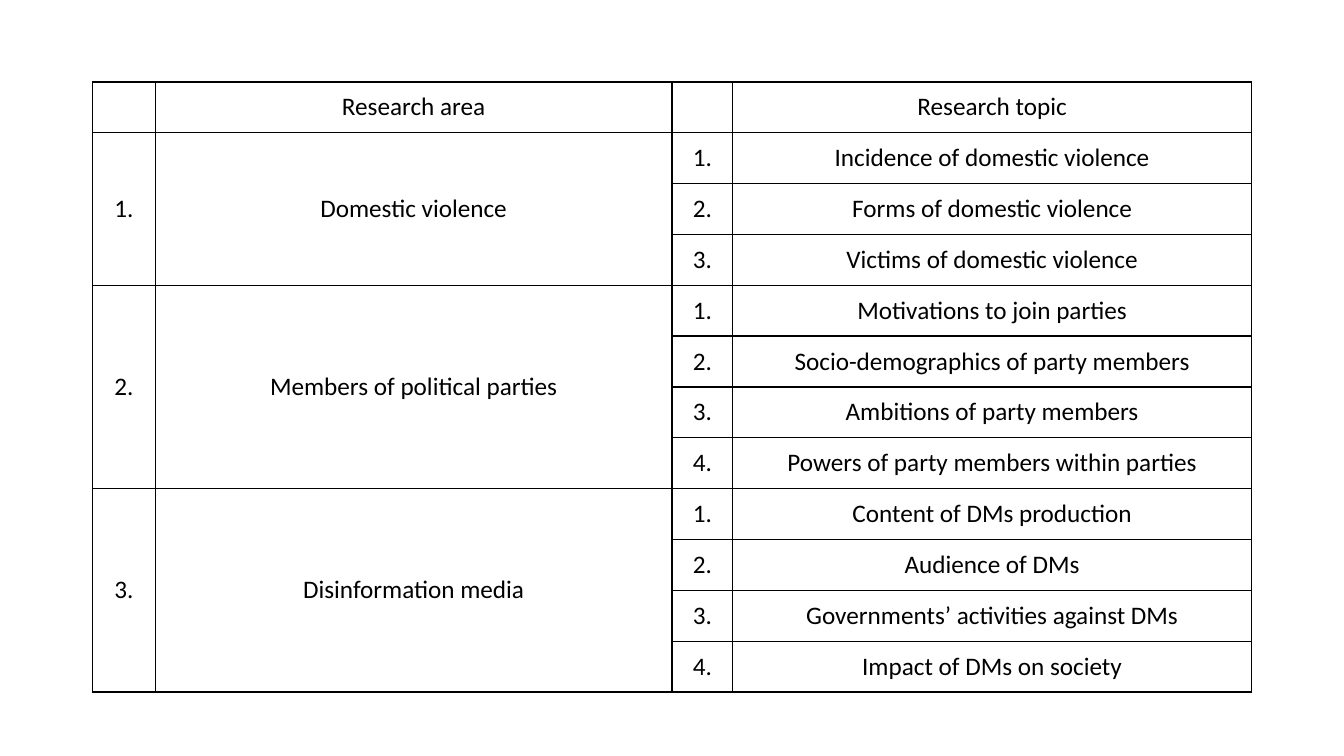
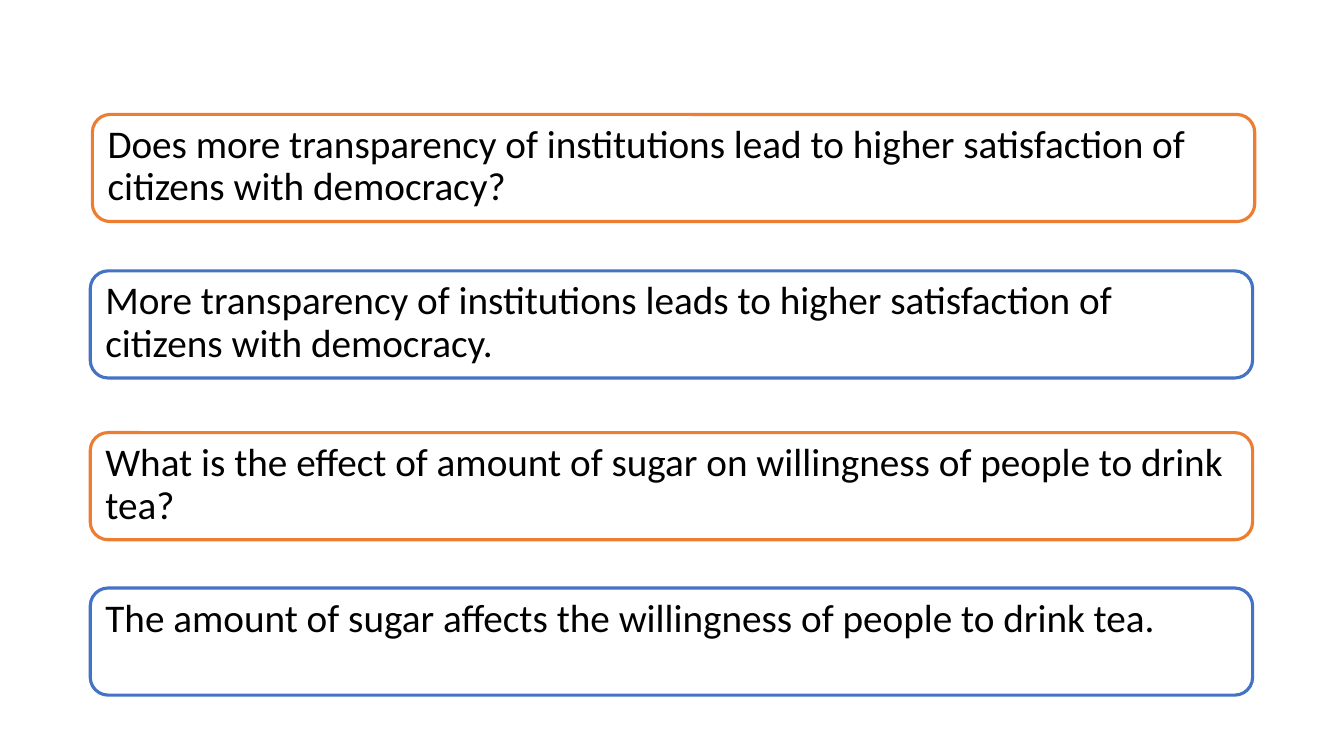
"""Build two slides: a table of research areas and topics, and four example statements."""
from itertools import product

from lxml.etree import SubElement
from pptx import Presentation
from pptx.dml.color import RGBColor
from pptx.enum.shapes import MSO_SHAPE
from pptx.enum.text import MSO_ANCHOR, PP_ALIGN
from pptx.oxml import parse_xml
from pptx.oxml.ns import nsdecls, qn
from pptx.util import Pt

PX = 9525
BLACK = RGBColor(0x00, 0x00, 0x00)
WHITE = RGBColor(0xFF, 0xFF, 0xFF)
BLUE = RGBColor(0x44, 0x72, 0xC4)
ORANGE = RGBColor(0xED, 0x7D, 0x31)

CELL_FONT = {"name": "Calibri", "size": Pt(18)}
CELL_FORMAT = {"alignment": PP_ALIGN.CENTER}
STATEMENT_FONT = {"name": "Calibri", "size": Pt(28)}
STATEMENT_FORMAT = {"alignment": PP_ALIGN.LEFT, "line_spacing": 0.9}
PLAIN_TABLE = {"first_row": False, "horz_banding": False}

HEADINGS = ("Research area", "Research topic")
RESEARCH = {
    "Domestic violence": (
        "Incidence of domestic violence",
        "Forms of domestic violence",
        "Victims of domestic violence",
    ),
    "Members of political parties": (
        "Motivations to join parties",
        "Socio-demographics of party members",
        "Ambitions of party members",
        "Powers of party members within parties",
    ),
    "Disinformation media": (
        "Content of DMs production",
        "Audience of DMs",
        "Governments’ activities against DMs",
        "Impact of DMs on society",
    ),
}
STATEMENTS = (
    (88, 109, ORANGE, "Does more transparency of institutions lead to higher "
                      "satisfaction of citizens with democracy?"),
    (86, 258, BLUE, "More transparency of institutions leads to higher "
                    "satisfaction of citizens with democracy."),
    (86, 412, ORANGE, "What is the effect of amount of sugar on willingness "
                      "of people to drink tea?"),
    (86, 560, BLUE, "The amount of sugar affects the willingness of people "
                    "to drink tea."),
)


def assign(target, values):
    """Set each named attribute of the target."""
    for name, value in values.items():
        setattr(target, name, value)


class Deck:
    """Hold the presentation, its style and the current slide."""

    def __init__(self, width, height):
        """Start an empty presentation of the given size."""
        self.presentation = Presentation()
        assign(self.presentation,
               {"slide_width": width * PX, "slide_height": height * PX})
        self.slide = None

    def new_slide(self):
        """Add a blank slide and make it current."""
        self.slide = self.presentation.slides.add_slide(
            self.presentation.slide_layouts[6])

    def set_text(self, frame, text, layout, font):
        """Fill a frame with one formatted paragraph."""
        paragraph = frame.paragraphs[0]
        paragraph.text = text
        assign(paragraph, layout)
        assign(paragraph.font, font)
        paragraph.font.color.rgb = BLACK

    def statement(self, left, top, color, text):
        """Draw a rounded box with a statement."""
        box = self.slide.shapes.add_shape(
            MSO_SHAPE.ROUNDED_RECTANGLE,
            left * PX, top * PX, 1107 * PX, 102 * PX)
        box.shadow.inherit = False
        box.fill.solid()
        box.fill.fore_color.rgb = WHITE
        box.line.color.rgb = color
        box.line.width = Pt(2.25)
        assign(box.text_frame,
               {"word_wrap": True, "vertical_anchor": MSO_ANCHOR.TOP})
        self.set_text(box.text_frame, text, STATEMENT_FORMAT, STATEMENT_FONT)

    def grid(self, left, top, widths, height, row_count):
        """Draw an empty ruled table with rows sharing the height."""
        table = self.slide.shapes.add_table(
            row_count, len(widths), left * PX, top * PX,
            sum(widths) * PX, height * PX).table
        assign(table, PLAIN_TABLE)
        for column, width in zip(table.columns, widths):
            column.width = width * PX
        for row in table.rows:
            row.height = height * PX // row_count
        for row, column in product(range(row_count), range(len(widths))):
            self.rule(table.cell(row, column))
        return table

    def rule(self, cell):
        """Give a cell thin black borders and no fill."""
        cell.fill.background()
        properties = cell._tc.get_or_add_tcPr()
        for index, side in enumerate("LRTB"):
            border = parse_xml(f'<a:ln{side} {nsdecls("a")} w="{Pt(1)}"/>')
            fill = SubElement(border, qn("a:solidFill"))
            SubElement(fill, qn("a:srgbClr"), val=str(BLACK))
            properties.insert(index, border)

    def entry(self, cell, text):
        """Put centred text in a table cell."""
        cell.vertical_anchor = MSO_ANCHOR.MIDDLE
        self.set_text(cell.text_frame, text, CELL_FORMAT, CELL_FONT)

    def research_table(self, headings, research):
        """Draw numbered areas beside their numbered topics."""
        row_count = 1 + sum(map(len, research.values()))
        table = self.grid(88, 78, (60, 492, 58, 494), 581, row_count)
        for column, heading in zip((1, 3), headings):
            self.entry(table.cell(0, column), heading)
        first = 1
        for area_number, (area, topics) in enumerate(research.items(), 1):
            last = first + len(topics) - 1
            for column, text in enumerate((f"{area_number}.", area)):
                cell = table.cell(first, column)
                cell.merge(table.cell(last, column))
                self.entry(cell, text)
            for topic_number, topic in enumerate(topics, 1):
                row = first + topic_number - 1
                self.entry(table.cell(row, 2), f"{topic_number}.")
                self.entry(table.cell(row, 3), topic)
            first = last + 1


def main():
    """Build and save the slides."""
    deck = Deck(1280, 720)
    deck.new_slide()
    deck.research_table(HEADINGS, RESEARCH)
    deck.new_slide()
    for statement in STATEMENTS:
        deck.statement(*statement)
    deck.presentation.save("out.pptx")


if __name__ == "__main__":
    main()
